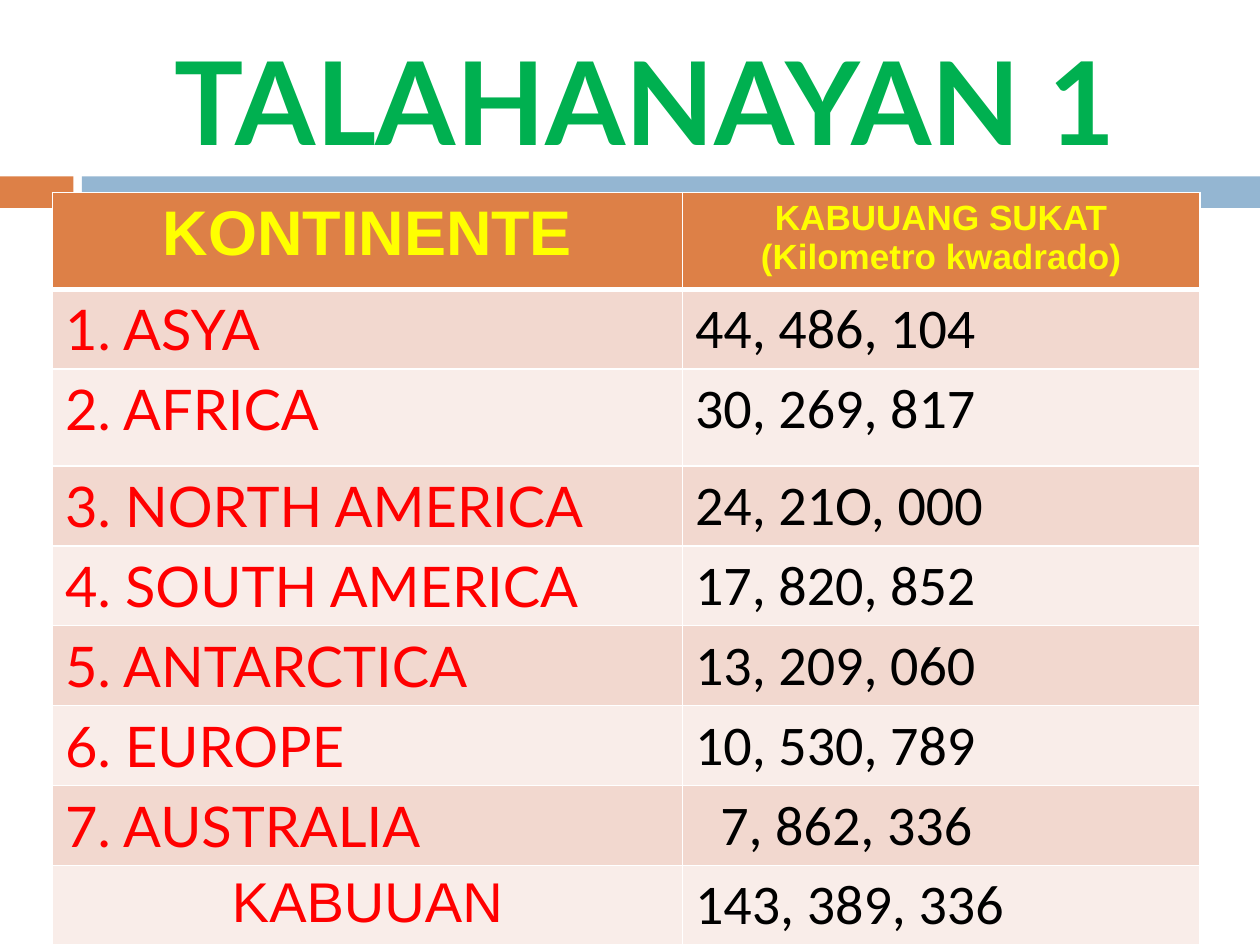
from dataclasses import dataclass

from lxml import etree
from pptx import Presentation
from pptx.dml.color import RGBColor
from pptx.enum import shapes, text
from pptx.oxml import ns
from pptx.util import Pt


@dataclass(frozen=True)
class Theme:
    orange: str = "DD8047"
    blue: str = "94B6D2"
    green: str = "00B050"
    yellow: str = "FFFF00"
    red: str = "FF0000"
    black: str = "000000"
    white: str = "FFFFFF"
    bands: tuple = ("F2D8CF", "F9EDE9")
    title_size: int = 66
    heading_size: int = 36
    unit_size: int = 20
    body_size: int = 32


class Deck:
    def __init__(self, theme, width, height):
        self.theme = theme
        self.presentation = Presentation()
        self.presentation.slide_width = Pt(width)
        self.presentation.slide_height = Pt(height)
        self.slide = self.presentation.slides.add_slide(
            self.presentation.slide_layouts[6])

    def add_lines(self, frame, lines, color, align=text.PP_ALIGN.LEFT, indent=0, **font):
        for number, line in enumerate(lines):
            paragraph = frame.paragraphs[0] if number == 0 else frame.add_paragraph()
            paragraph.alignment = align
            if indent:
                properties = paragraph._p.get_or_add_pPr()
                properties.set("marL", str(Pt(indent)))
                properties.set("indent", "0")
            run = paragraph.add_run()
            run.text = line
            run.font.color.rgb = RGBColor.from_string(color)
            for name, value in font.items():
                setattr(run.font, name, value)

    def bar(self, left, top, width, height, color):
        bar = self.slide.shapes.add_shape(
            shapes.MSO_SHAPE.RECTANGLE, Pt(left), Pt(top), Pt(width), Pt(height))
        bar.shadow.inherit = False
        bar.fill.solid()
        bar.fill.fore_color.rgb = RGBColor.from_string(color)
        bar.line.fill.background()

    def title(self, left, top, width, height, line):
        frame = self.slide.shapes.add_textbox(
            Pt(left), Pt(top), Pt(width), Pt(height)).text_frame
        frame.word_wrap = True
        frame.vertical_anchor = text.MSO_ANCHOR.MIDDLE
        self.add_lines(frame, [line], self.theme.green, text.PP_ALIGN.CENTER,
                       size=Pt(self.theme.title_size), name="Lato", bold=True)

    def table(self, left, top, columns, rows):
        table = self.slide.shapes.add_table(
            len(rows), len(columns), Pt(left), Pt(top),
            Pt(sum(columns)), Pt(sum(rows))).table
        for column, width in zip(table.columns, columns):
            column.width = Pt(width)
        for row, height in zip(table.rows, rows):
            row.height = Pt(height)
        return table

    def cell(self, cell, lines, fill, borders, **style):
        cell.fill.solid()
        cell.fill.fore_color.rgb = RGBColor.from_string(fill)
        self.add_lines(cell.text_frame, lines, **style)
        # Border lines stand before the fill in the cell properties
        properties = cell._tc.get_or_add_tcPr()
        for position, (side, width) in enumerate(borders.items()):
            line = etree.Element(ns.qn(f"a:ln{side}"), w=str(Pt(width)))
            solid = etree.SubElement(line, ns.qn("a:solidFill"))
            etree.SubElement(solid, ns.qn("a:srgbClr"), val=self.theme.white)
            properties.insert(position, line)


def main():
    theme = Theme()
    deck = Deck(theme, 720, 540)
    center = text.PP_ALIGN.CENTER

    # Band behind the table, and title
    deck.bar(0, 100.8, 42, 18, theme.orange)
    deck.bar(46.8, 100.8, 673.2, 18, theme.blue)
    deck.title(48, 18, 642, 78, "TALAHANAYAN 1")

    # Table grid: the row for Africa is taller
    continents = [
        ("1. ASYA", "44, 486, 104"),
        ("2. AFRICA", "30, 269, 817"),
        ("3. NORTH AMERICA", "24, 21O, 000"),
        ("4. SOUTH AMERICA", "17, 820, 852"),
        ("5. ANTARCTICA", "13, 209, 060"),
        ("6. EUROPE", "10, 530, 789"),
        ("7. AUSTRALIA", "7, 862, 336"),
        ("KABUUAN", "143, 389, 336"),
    ]
    heights = [48] + [43.2] * len(continents)
    heights[2] = 55.4
    areas = deck.table(30, 110, [360, 295.6], heights)

    # Header row
    thin = dict(L=1, R=1, T=1, B=1)
    headings = [
        (["KONTINENTE"], theme.heading_size),
        (["KABUUANG SUKAT", "(Kilometro kwadrado)"], theme.unit_size),
    ]
    for column, (lines, size) in enumerate(headings):
        deck.cell(areas.cell(0, column), lines, theme.orange, thin | dict(B=3),
                  color=theme.yellow, align=center, size=Pt(size),
                  name="Arial", bold=True)

    # Continents and total
    body = dict(size=Pt(theme.body_size), bold=False)
    for row, (continent, area) in enumerate(continents, start=1):
        fill = theme.bands[(row - 1) % 2]
        borders = thin | dict(T=3 if row == 1 else 1)
        total = row == len(continents)
        label = dict(name="Arial", align=center) if total else dict(name="Lato")
        deck.cell(areas.cell(row, 0), [continent], fill, borders,
                  color=theme.red, **label, **body)
        deck.cell(areas.cell(row, 1), [area], fill, borders, color=theme.black,
                  indent=14.4 if row == 7 else 0, name="Calibri", **body)

    deck.presentation.save("out.pptx")


if __name__ == "__main__":
    main()
